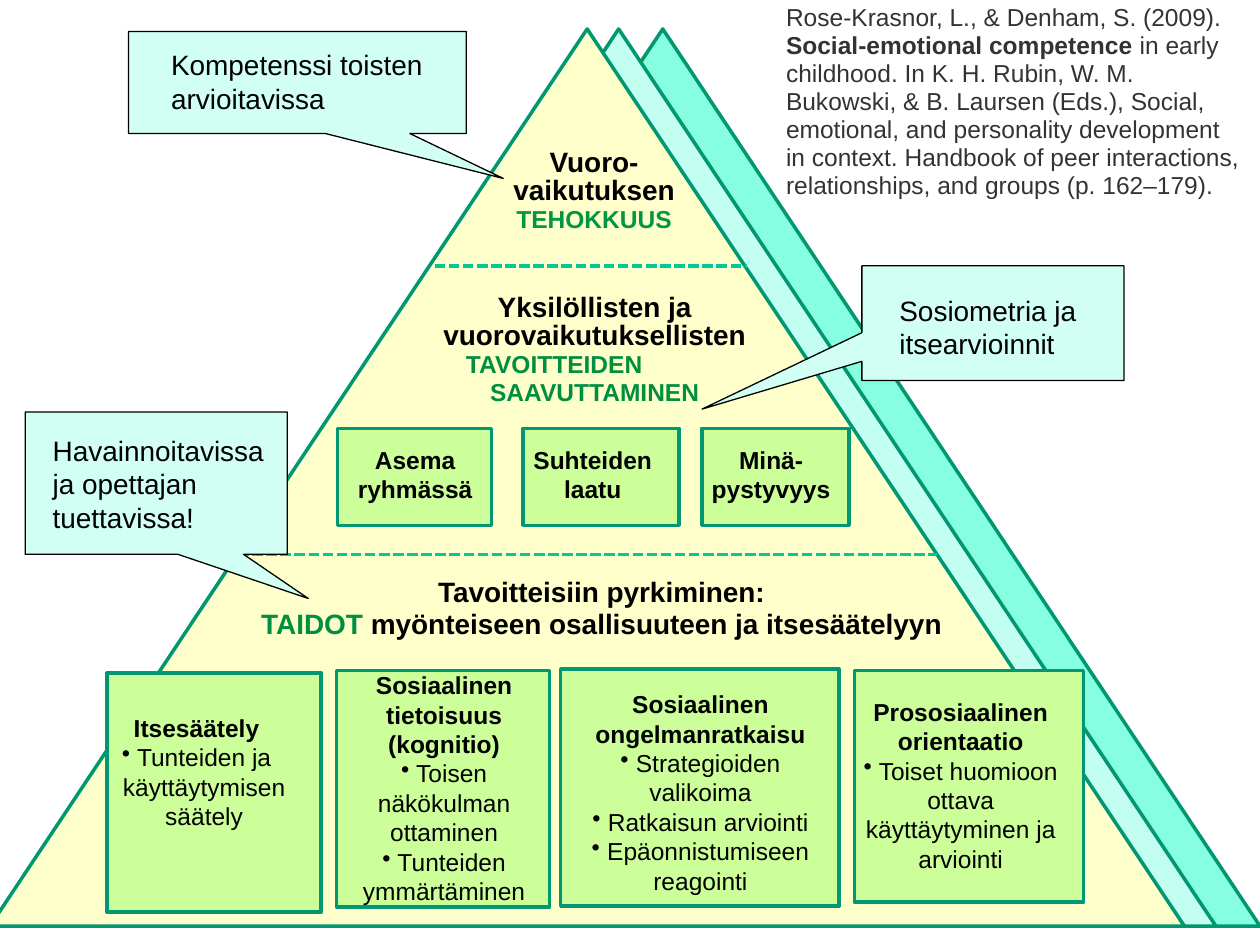
"""Build the social-emotional competence pyramid slide."""
import pptx
import pptx.dml.color
import pptx.enum.dml
import pptx.enum.shapes
import pptx.enum.text
import pptx.oxml
import pptx.oxml.ns
import pptx.util
from pptx.util import Inches

COLORS = {
    "back": "85FFE0", "middle": "C2FFF0", "front": "FFFFCC", "edge": "009771",
    "box": "CCFF99", "divider": "00C896", "callout": "D1FFF3", "black": "000000",
    "tehokkuus": "009644", "green": "008E40", "reference": "333333",
}
SHAPES = pptx.enum.shapes.MSO_SHAPE
ALIGN = pptx.enum.text.PP_ALIGN


def add_block(kind, bounds, fill, line="edge", width=2):
    block = slide.shapes.add_shape(kind, *map(Inches, bounds))
    block.shadow.inherit = False
    block.fill.solid()
    block.fill.fore_color.rgb = pptx.dml.color.RGBColor.from_string(COLORS[fill])
    block.line.color.rgb = pptx.dml.color.RGBColor.from_string(COLORS[line])
    block.line.width = pptx.util.Pt(width)
    return block


def add_text(bounds, paragraphs, align=ALIGN.CENTER, spacing=None, bullets=(), hanging=0):
    frame = slide.shapes.add_textbox(*map(Inches, bounds)).text_frame
    frame.word_wrap = True
    frame.auto_size = pptx.enum.text.MSO_AUTO_SIZE.SHAPE_TO_FIT_TEXT
    bullet_runs = [[(bullet, 14, False, "black")] for bullet in bullets]
    for index, runs in enumerate(paragraphs + bullet_runs):
        paragraph = frame.paragraphs[0] if index == 0 else frame.add_paragraph()
        paragraph.alignment = align
        if spacing:
            paragraph.line_spacing = pptx.util.Pt(spacing)
        if index >= len(paragraphs):
            properties = paragraph._p.get_or_add_pPr()
            properties.set("marL", str(Inches(hanging)))
            properties.set("indent", str(-Inches(hanging)))
            properties.append(pptx.oxml.parse_xml(
                f'<a:buChar {pptx.oxml.ns.nsdecls("a")} char="•"/>'))
        for words, size, bold, color in runs:
            run = paragraph.add_run()
            run.text = words
            run.font.name = "Arial"
            run.font.size = pptx.util.Pt(size)
            run.font.bold = bold
            run.font.color.rgb = pptx.dml.color.RGBColor.from_string(COLORS[color])
    return frame


presentation = pptx.Presentation()
presentation.slide_width = Inches(10)
presentation.slide_height = Inches(7.5)
slide = presentation.slides.add_slide(presentation.slide_layouts[6])

for left, layer in [(0.52, "back"), (0.17, "middle"), (-0.08, "front")]:
    add_block(SHAPES.ISOSCELES_TRIANGLE, (left, 0.23, 9.48, 7.12), layer)

add_text((3.94, 1.14, 1.55, 0.77), [[
    ("Vuoro-vaikutuksen ", 16, True, "black"),
    ("TEHOKKUUS", 14, True, "tehokkuus"),
]], spacing=16)
goals = add_text((3.3, 2.29, 2.84, 1), [
    [("Yksilöllisten ja vuorovaikutuksellisten", 16, True, "black")],
    [("TAVOITTEIDEN", 14, True, "green")],
    [("SAAVUTTAMINEN", 14, True, "green")],
], spacing=16)
goals.paragraphs[1].alignment = ALIGN.LEFT
goals.paragraphs[1]._p.get_or_add_pPr().set("marL", str(Inches(0.3)))
add_text((1.72, 4.53, 6.11, 0.61), [
    [("Tavoitteisiin pyrkiminen:", 16, True, "black")],
    [("TAIDOT", 16, True, "green"),
     (" myönteiseen osallisuuteen ja itsesäätelyyn", 16, True, "black")],
], spacing=18)

for start, end, height in [(3.45, 5.93, 2.11), (1.89, 7.44, 4.4)]:
    divider = slide.shapes.add_connector(
        pptx.enum.shapes.MSO_CONNECTOR.STRAIGHT,
        Inches(start), Inches(height), Inches(end), Inches(height))
    divider.line.color.rgb = pptx.dml.color.RGBColor.from_string(COLORS["divider"])
    divider.line.width = pptx.util.Pt(2)
    divider.line.dash_style = pptx.enum.dml.MSO_LINE.SQUARE_DOT
    divider._element.spPr.append(pptx.oxml.parse_xml(
        f'<a:effectLst {pptx.oxml.ns.nsdecls("a")}/>'))

goal_boxes = [
    (2.68, 1.22, 2.73, 1.13, "Asema ryhmässä"),
    (4.15, 1.24, 3.92, 1.57, "Suhteiden laatu"),
    (5.57, 1.17, 5.47, 1.3, "Minä-pystyvyys"),
]
for left, width, text_left, text_width, goal in goal_boxes:
    add_block(SHAPES.RECTANGLE, (left, 3.4, width, 0.77), "box")
    add_text((text_left, 3.48, text_width, 0.57), [[(goal, 14, True, "black")]])

skill_boxes = [
    ((6.78, 5.32, 1.82, 1.84), (6.73, 5.48, 1.79, 1.51), "Prososiaalinen orientaatio",
     [" Toiset huomioon ottava käyttäytyminen ja arviointi"], 0),
    ((4.45, 5.31, 2.21, 1.88), (4.43, 5.42, 2.26, 1.75), "Sosiaalinen ongelmanratkaisu",
     [" Strategioiden valikoima", " Ratkaisun arviointi", " Epäonnistumiseen reagointi"], 0),
    ((2.67, 5.32, 1.69, 1.88), (2.62, 5.27, 1.81, 1.99), "Sosiaalinen tietoisuus (kognitio)",
     [" Toisen näkökulman ottaminen", " Tunteiden ymmärtäminen"], 0),
    ((0.85, 5.34, 1.7, 1.9), (0.6, 5.61, 1.92, 1.04), "Itsesäätely",
     ["Tunteiden ja käyttäytymisen säätely"], 0.12),
]
for bounds, text_bounds, skill, examples, hanging in skill_boxes:
    add_block(SHAPES.RECTANGLE, bounds, "box")
    add_text(text_bounds, [[(skill, 14, True, "black")]], bullets=examples, hanging=hanging)

callouts = [
    ((0.2, 3.27, 2.08, 1.13), (0.58, 0.81), (0.32, 3.39, 1.94, 0.91),
     "Havainnoitavissa ja opettajan tuettavissa!"),
    ((6.84, 2.11, 2.08, 0.91), (-1.11, 0.75), (7.04, 2.28, 1.94, 0.64),
     "Sosiometria ja itsearvioinnit"),
    ((1.02, 0.25, 2.68, 0.81), (0.61, 0.94), (1.26, 0.33, 2.53, 0.64),
     "Kompetenssi toisten arvioitavissa"),
]
for bounds, tip, text_bounds, remark in callouts:
    callout = add_block(SHAPES.RECTANGULAR_CALLOUT, bounds, "callout", "black", 0.75)
    callout.adjustments[0], callout.adjustments[1] = tip
    add_text(text_bounds, [[(remark, 16, False, "black")]], ALIGN.LEFT)

add_text((6.14, -0.02, 3.83, 1.67), [[
    ("Rose-Krasnor, L., & Denham, S. (2009). ", 14, False, "reference"),
    ("Social-emotional competence ", 14, True, "reference"),
    ("in early childhood. In K. H. Rubin, W. M. Bukowski, & B. Laursen (Eds.), "
     "Social, emotional, and personality development in context. Handbook of peer "
     "interactions, relationships, and groups (p. 162–179).", 14, False, "reference"),
]], ALIGN.LEFT, 16)

presentation.save("out.pptx")
